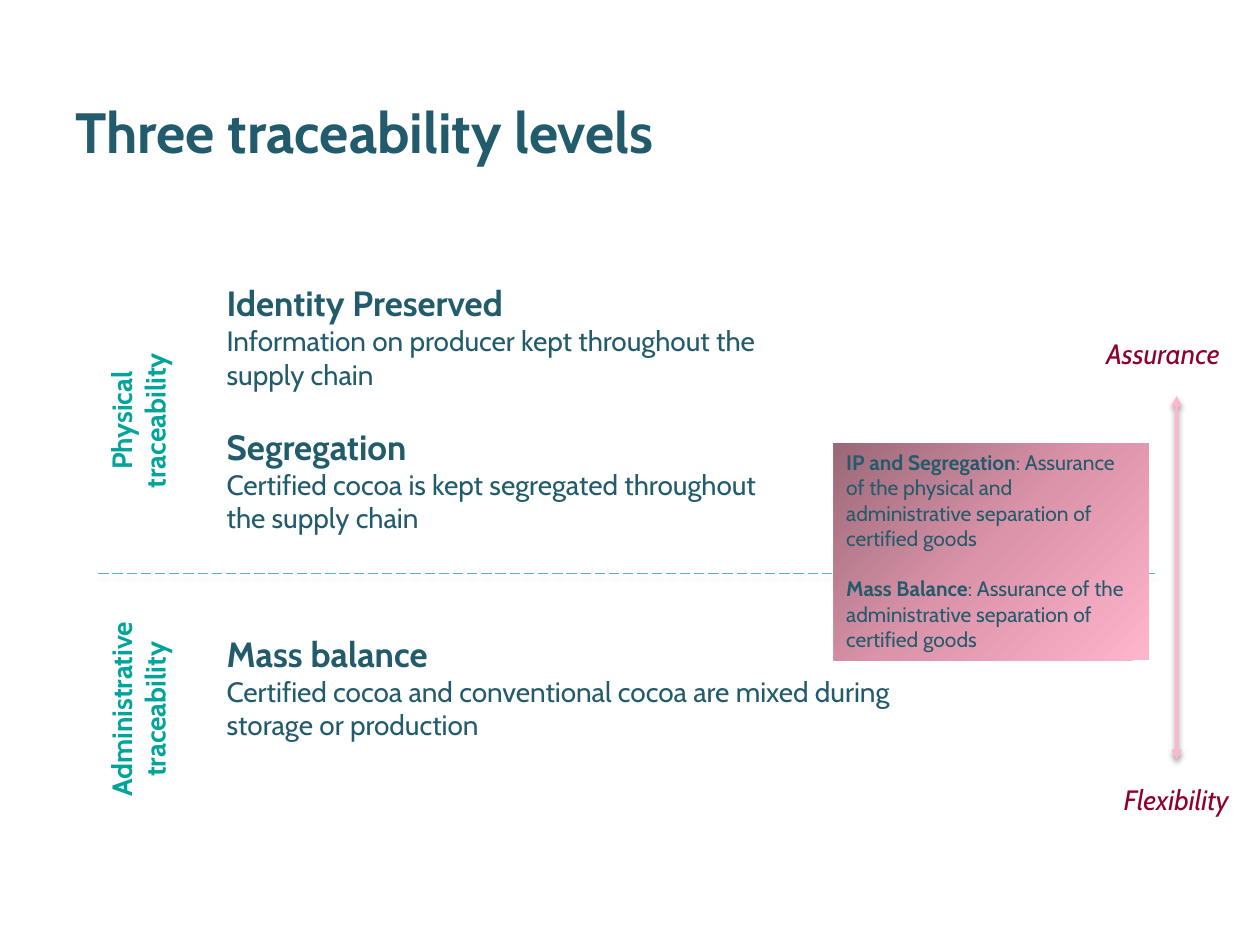
import lxml.etree
import pptx
import pptx.dml.color
import pptx.enum.shapes
import pptx.enum.text
import pptx.oxml
import pptx.oxml.ns
import pptx.util

Cm, Pt = pptx.util.Cm, pptx.util.Pt
qn = pptx.oxml.ns.qn
ALIGN = pptx.enum.text.PP_ALIGN
ANCHOR = pptx.enum.text.MSO_ANCHOR

FONT = "Cabin"
HUES = {
    "text": "225B6B", "tag": "00A49A", "scale": "8E002B",
    "rule": "57B0CA", "arrow": "FFB5CC",
    "dark": "9A6877", "mid": "DC94AA", "light": "FFB5CC",
}
NS = 'xmlns:a="http://schemas.openxmlformats.org/drawingml/2006/main"'
SHADE = (
    f'<a:effectLst {NS}><a:outerShdw blurRad="39400" dist="20300" dir="5400000">'
    '<a:srgbClr val="000000"><a:alpha val="38000"/></a:srgbClr>'
    '</a:outerShdw></a:effectLst>'
)


def rgb(hue):
    return pptx.dml.color.RGBColor.from_string(HUES[hue])


def style(run, size, hue="text", bold=False, slant=False):
    font = run.font
    font.name, font.size = FONT, Pt(size)
    font.bold, font.italic = bold, slant
    font.color.rgb = rgb(hue)


def add_para(frame, first, gap=0):
    para = frame.paragraphs[0] if first else frame.add_paragraph()
    para.alignment = ALIGN.LEFT
    if gap and not first:
        para.space_before = Pt(gap)
    return para


def add_text(slide, box, wrap=True):
    shape = slide.shapes.add_textbox(*map(Cm, box))
    shape.text_frame.word_wrap = wrap
    return shape


def add_label(slide, box, text, hue, bold=False, slant=False, wrap=True):
    """Place a one-paragraph label of 16 points."""
    shape = add_text(slide, box, wrap)
    para = shape.text_frame.paragraphs[0]
    para.text = text
    style(para.runs[0], 16, hue, bold, slant)
    return shape


def add_line(slide, start, end, hue, width):
    """Draw a straight line with a soft shadow and return its line element."""
    kind = pptx.enum.shapes.MSO_CONNECTOR.STRAIGHT
    line = slide.shapes.add_connector(kind, *map(Cm, start + end))
    line.line.color.rgb = rgb(hue)
    line.line.width = Pt(width)
    line.element.spPr.append(pptx.oxml.parse_xml(SHADE))
    return line.element.spPr.find(qn("a:ln"))


def add_title(slide, box, text):
    title = slide.shapes.title
    title.left, title.top, title.width, title.height = map(Cm, box)
    frame = title.text_frame
    frame.text = text
    frame.auto_size = pptx.enum.text.MSO_AUTO_SIZE.NONE
    frame.vertical_anchor = ANCHOR.MIDDLE
    frame.paragraphs[0].alignment = ALIGN.LEFT
    style(frame.paragraphs[0].runs[0], 32.4, bold=True)


def add_rule(slide, box):
    left, top, width, _ = box
    ln = add_line(slide, (left, top), (left + width, top), "rule", 0.75)
    lxml.etree.SubElement(ln, qn("a:prstDash"), val="lgDash")


def add_band(slide, box, tag, span, levels, wrap=True):
    """Place an upright tag of length span beside its levels."""
    left, top, width, height = box
    thick = 1.63
    spot = (left + 0.81 - span / 2, top + (height - thick) / 2, span, thick)
    label = add_label(slide, spot, tag, "tag", bold=True)
    label.rotation = 270
    label.text_frame.paragraphs[0].alignment = ALIGN.CENTER

    inset = 2.34
    body = add_text(slide, (left + inset, top, width - inset, height), wrap)
    frame = body.text_frame
    for i, (name, *lines) in enumerate(levels):
        head = add_para(frame, i == 0, gap=19.4)
        head.text = name
        style(head.runs[0], 20, bold=True)
        for text in lines:
            para = add_para(frame, False)
            para.text = text
            style(para.runs[0], 16)


def add_scale(slide, box, high, low):
    """Place a double arrow between two labels."""
    left, top, width, height = box
    tall = 0.94
    mid = left + 1.67
    ln = add_line(slide, (mid, top + 1.33), (mid, top + height - 1.27), "arrow", 2)
    for end in ("a:headEnd", "a:tailEnd"):
        lxml.etree.SubElement(ln, qn(end), type="triangle")
    add_label(slide, (left, top, 2.87, tall), high, "scale",
              slant=True, wrap=False)
    add_label(slide, (left + width - 2.67, top + height - tall, 2.67, tall),
              low, "scale", slant=True, wrap=False)


def fade(shape):
    """Fill a shape with a gradient spreading from its top left corner."""
    stops = "".join(
        f'<a:gs pos="{pos}"><a:srgbClr val="{HUES[hue]}"/></a:gs>'
        for pos, hue in ((0, "dark"), (50000, "mid"), (100000, "light"))
    )
    shape.fill.background()
    props = shape.element.spPr
    props.replace(props.find(qn("a:noFill")), pptx.oxml.parse_xml(
        f'<a:gradFill {NS} rotWithShape="1"><a:gsLst>{stops}</a:gsLst>'
        '<a:path path="circle"><a:fillToRect r="100000" b="100000"/></a:path>'
        '</a:gradFill>'))


def add_card(slide, box, notes):
    kind = pptx.enum.shapes.MSO_SHAPE.RECTANGLE
    card = slide.shapes.add_shape(kind, *map(Cm, box))
    card.shadow.inherit = False
    card.line.fill.background()
    fade(card)
    frame = card.text_frame
    frame.word_wrap = True
    frame.vertical_anchor = ANCHOR.TOP
    for i, (term, text) in enumerate(notes):
        para = add_para(frame, i == 0, gap=14.5)
        for part, bold in ((term, True), (": " + text, False)):
            run = para.add_run()
            run.text = part
            style(run, 12, bold=bold)


def main():
    deck = pptx.Presentation()
    deck.slide_width, deck.slide_height = Cm(25.4), Cm(19.05)
    slide = deck.slides.add_slide(deck.slide_layouts.get_by_name("Title Only"))
    add_title(slide, (1.27, 1.83, 21.13, 1.63), "Three traceability levels")
    add_rule(slide, (1.98, 11.56, 21.31, 0))
    add_band(slide, (1.98, 5.56, 13.9, 5.84), "Physical traceability", 4.34, [
        ("Identity Preserved",
         "Information on producer kept throughout the supply chain"),
        ("Segregation",
         "Certified cocoa is kept segregated throughout the supply chain"),
    ])
    add_band(slide, (1.98, 12.62, 16.28, 3.36),
             "Administrative traceability", 5.16, [
        ("Mass balance",
         "Certified cocoa and conventional cocoa are mixed during",
         "storage or production"),
    ], wrap=False)
    add_scale(slide, (22.05, 6.65, 3.02, 9.94), "Assurance", "Flexibility")
    add_card(slide, (16.81, 8.94, 6.35, 4.37), [
        ("IP and Segregation", "Assurance of the physical and "
         "administrative separation of certified goods"),
        ("Mass Balance",
         "Assurance of the administrative separation of certified goods"),
    ])
    deck.save("out.pptx")


if __name__ == "__main__":
    main()
